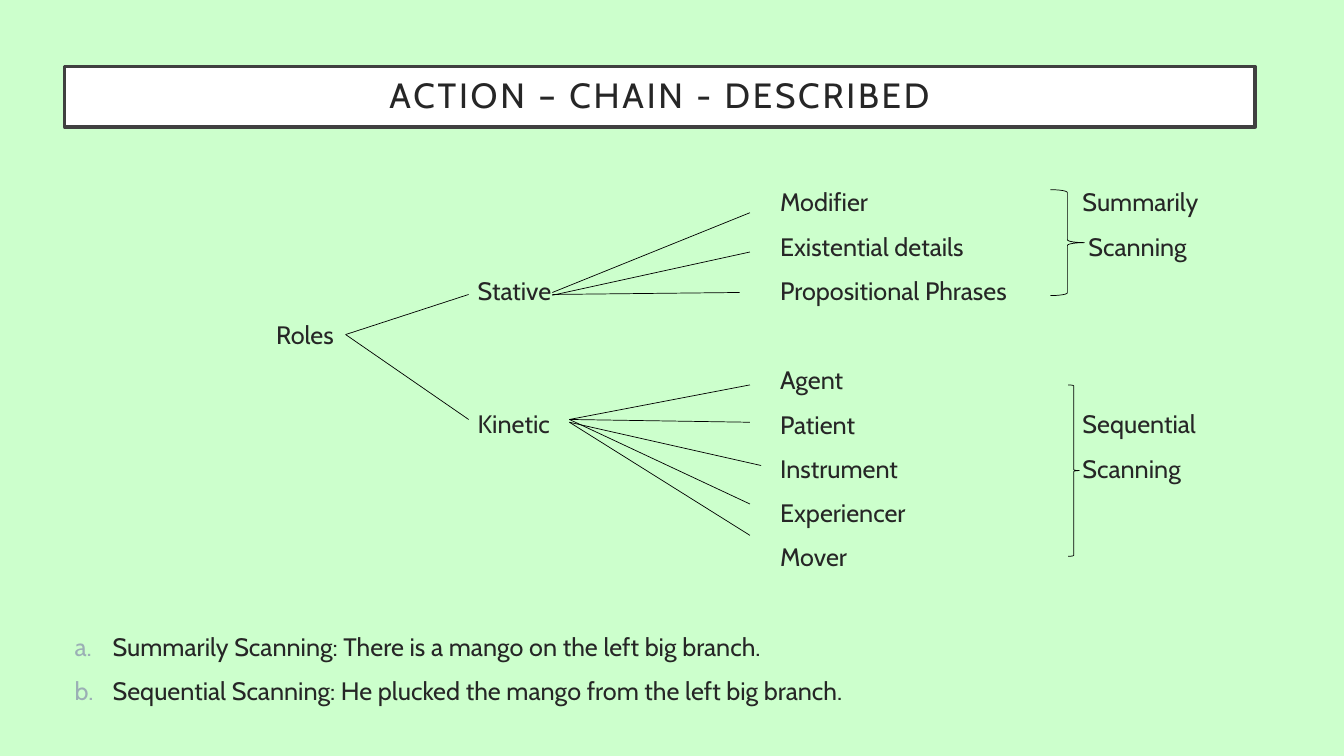
from lxml import etree
from pptx import Presentation
from pptx.dml.color import RGBColor
from pptx.enum.shapes import MSO_CONNECTOR, MSO_SHAPE
from pptx.enum.text import MSO_ANCHOR, PP_ALIGN
from pptx.oxml.ns import qn
from pptx.util import Cm, Pt

STRAIGHT = MSO_CONNECTOR.STRAIGHT
RECTANGLE = MSO_SHAPE.RECTANGLE
RIGHT_BRACE = MSO_SHAPE.RIGHT_BRACE
MIDDLE = MSO_ANCHOR.MIDDLE
CENTER = PP_ALIGN.CENTER
LEFT = PP_ALIGN.LEFT

FONT = "Cabin"
COLORS = {
    "background": "CCFFCC",
    "panel": "FFFFFF",
    "frame": "404040",
    "text": "262626",
    "line": "000000",
    "letter": "9BAFB5",
}

# Text rows share one pitch; columns are one inch multiples apart (cm)
FIRST_ROW = 5.08
ROW_PITCH = 1.12
ROLES, GROUPS, MEMBERS, SCANNING = 6.96, 12.04, 19.66, 27.28

# Text blocks: left, first row, width, lines
BLOCKS = [
    (ROLES, 3, 2.5, ["Roles"]),
    (GROUPS, 2, 2.5, ["Stative"]),
    (GROUPS, 5, 2.5, ["Kinetic"]),
    (MEMBERS, 0, 6.7, ["Modifier", "Existential details", "Propositional Phrases"]),
    (MEMBERS, 4, 6.7, ["Agent", "Patient", "Instrument", "Experiencer", "Mover"]),
    (SCANNING, 0, 4, ["Summarily"]),
    (SCANNING + 0.15, 1, 4, ["Scanning"]),
    (SCANNING, 5, 4, ["Sequential", "Scanning"]),
]
NOTES = [
    "Summarily Scanning: There is a mango on the left big branch.",
    "Sequential Scanning: He plucked the mango from the left big branch.",
]

# Fans of lines: start x, then (start y, end x, end y) of each line
FANS = [
    (8.71, [(8.43, 11.81, 7.42), (8.43, 11.81, 10.57)]),
    (13.92, [(7.37, 18.9, 5.36), (7.44, 18.9, 6.35), (7.42, 18.64, 7.37)]),
    (14.35, [(10.57, 18.9, 9.7), (10.57, 18.9, 10.64), (10.64, 19.18, 11.73),
             (10.57, 18.9, 12.7), (10.64, 18.9, 13.49)]),
]
# Braces: left, top, width, height
BRACES = [(26.47, 4.78, 0.86, 2.67), (26.92, 9.7, 0.28, 4.32)]


def color(name):
    return RGBColor.from_string(COLORS[name])


def format_text(paragraph, size, alignment=LEFT):
    paragraph.alignment = alignment
    for run in paragraph.runs:
        run.font.name = FONT
        run.font.size = Pt(size)
        run.font.color.rgb = color("text")


def set_line(shape, name, width):
    shape.line.color.rgb = color(name)
    shape.line.width = Pt(width)


def add_title(slide, text):
    shape = slide.shapes.add_shape(RECTANGLE, Cm(1.63), Cm(1.68), Cm(30), Cm(1.52))
    shape.shadow.inherit = False
    shape.fill.solid()
    shape.fill.fore_color.rgb = color("panel")
    set_line(shape, "frame", 2.5)
    frame = shape.text_frame
    frame.vertical_anchor = MIDDLE
    frame.margin_left = frame.margin_right = Cm(0.5)
    frame.margin_top = frame.margin_bottom = Cm(0.5)
    frame.text = text
    paragraph = frame.paragraphs[0]
    paragraph.line_spacing = 0.9
    format_text(paragraph, 25, CENTER)
    paragraph.runs[0].font._element.set("spc", "200")


def add_text_block(slide, left, first_row, width, lines):
    top = FIRST_ROW + (first_row - 0.5) * ROW_PITCH
    box = slide.shapes.add_textbox(Cm(left), Cm(top), Cm(width),
                                   Cm(len(lines) * ROW_PITCH))
    frame = box.text_frame
    frame.word_wrap = True
    frame.vertical_anchor = MIDDLE
    frame.margin_left = frame.margin_right = 0
    frame.margin_top = frame.margin_bottom = 0
    frame.text = "\n".join(lines)
    for index, paragraph in enumerate(frame.paragraphs):
        paragraph.space_before = Pt(10 if index else 0)
        format_text(paragraph, 18)
    return frame


def add_letters(frame):
    for paragraph in frame.paragraphs:
        properties = paragraph._p.get_or_add_pPr()
        properties.set("marL", str(Cm(0.96)))
        properties.set("indent", str(-Cm(0.96)))
        bullet_color = etree.SubElement(properties, qn("a:buClr"))
        etree.SubElement(bullet_color, qn("a:srgbClr"), val=COLORS["letter"])
        etree.SubElement(properties, qn("a:buFont"), typeface=FONT)
        etree.SubElement(properties, qn("a:buAutoNum"), type="alphaLcPeriod")


def add_fan(slide, start_x, lines):
    for start_y, end_x, end_y in lines:
        connector = slide.shapes.add_connector(
            STRAIGHT, Cm(start_x), Cm(start_y), Cm(end_x), Cm(end_y))
        set_line(connector, "line", 0.5)
        etree.SubElement(connector._element.spPr, qn("a:effectLst"))


def add_brace(slide, left, top, width, height):
    brace = slide.shapes.add_shape(RIGHT_BRACE, Cm(left), Cm(top),
                                   Cm(width), Cm(height))
    brace.shadow.inherit = False
    brace.fill.background()
    set_line(brace, "line", 0.5)


def main():
    presentation = Presentation()
    presentation.slide_width = Cm(33.87)
    presentation.slide_height = Cm(19.05)
    slide = presentation.slides.add_slide(presentation.slide_layouts[6])
    slide.background.fill.solid()
    slide.background.fill.fore_color.rgb = color("background")

    add_title(slide, "ACTION – CHAIN - DESCRIBED")

    # Tree of roles
    for block in BLOCKS:
        add_text_block(slide, *block)
    for fan in FANS:
        add_fan(slide, *fan)
    for brace in BRACES:
        add_brace(slide, *brace)

    # Lettered examples
    add_letters(add_text_block(slide, 1.88, 10, 29.5, NOTES))

    presentation.save("out.pptx")


if __name__ == "__main__":
    main()
